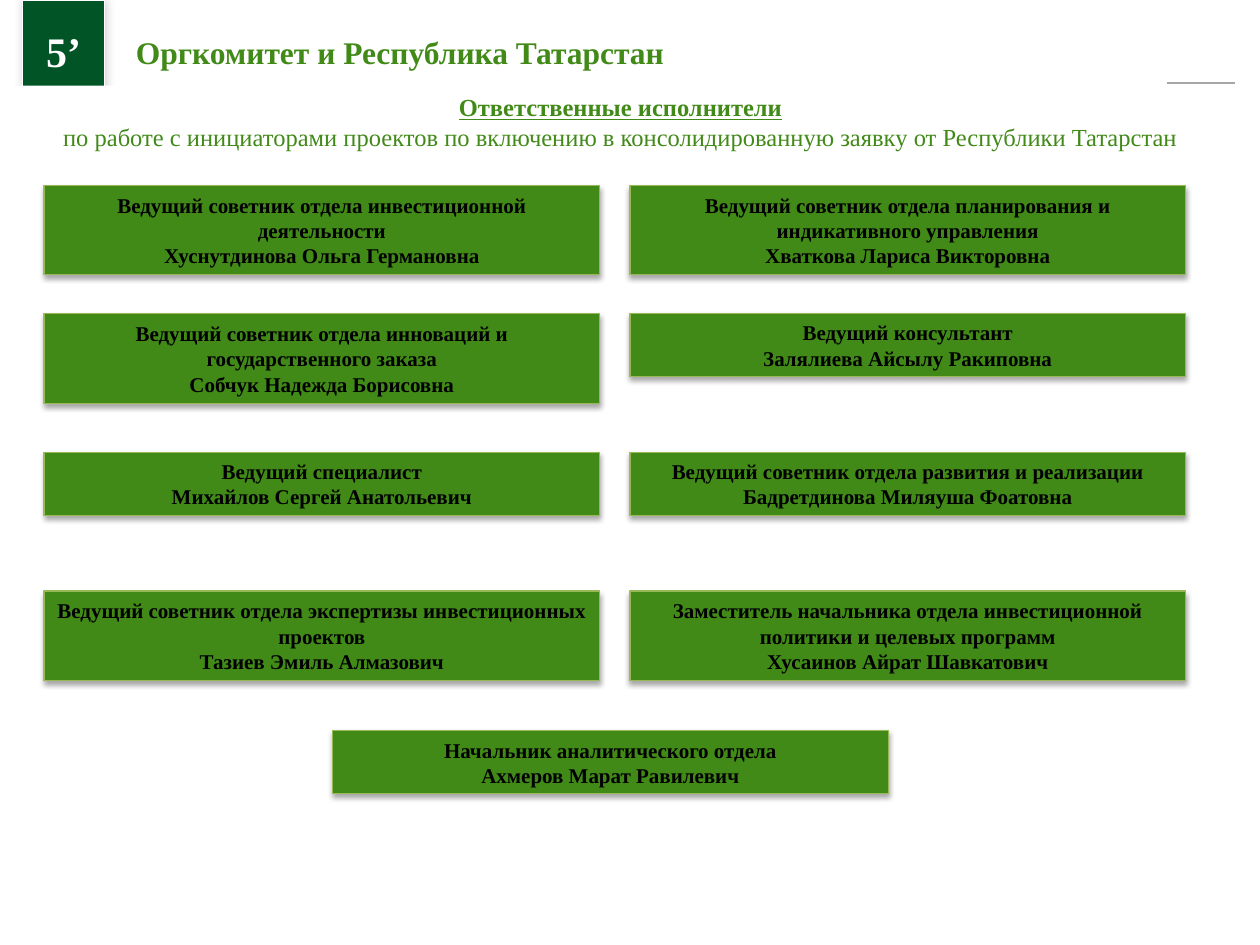
from lxml import etree
from pptx import Presentation
from pptx.dml.color import RGBColor
from pptx.enum import shapes, text
from pptx.oxml.ns import qn
from pptx.util import Inches, Pt

# Content
NUMBER = "5’"
TITLE = "Оргкомитет и Республика Татарстан"
HEAD = "Ответственные исполнители"
SUB = ("по работе с инициаторами проектов по включению "
       "в консолидированную заявку от Республики Татарстан")

# Rows of (post, name, lines of text)
ROWS = [
    [("Ведущий советник отдела инвестиционной деятельности",
      "Хуснутдинова Ольга Германовна", 3),
     ("Ведущий советник отдела планирования и индикативного управления",
      "Хваткова Лариса Викторовна", 3)],
    [("Ведущий советник отдела инноваций и государственного заказа",
      "Собчук Надежда Борисовна", 3),
     ("Ведущий консультант", "Залялиева Айсылу Ракиповна", 2)],
    [("Ведущий специалист", "Михайлов Сергей Анатольевич", 2),
     ("Ведущий советник отдела развития и реализации",
      "Бадретдинова Миляуша Фоатовна", 2)],
    [("Ведущий советник отдела экспертизы инвестиционных проектов",
      "Тазиев Эмиль Алмазович", 3),
     ("Заместитель начальника отдела инвестиционной политики и целевых программ",
      "Хусаинов Айрат Шавкатович", 3)],
    [("Начальник аналитического отдела", "Ахмеров Марат Равилевич", 2)],
]
TOPS = [1.47, 2.49, 3.59, 4.69, 5.8]
LEFTS = {1: [2.64], 2: [0.35, 5]}
WIDTH = 4.41
HEIGHTS = {2: 0.5, 3: 0.71}

COLORS = {"green": "418A18", "dark": "005426", "edge": "98B955",
          "white": "FFFFFF", "black": "000000", "gray": "A6A6A6"}
FONT = "Times New Roman"

deck = Presentation()
deck.slide_width, deck.slide_height = Inches(10), Inches(7.5)
slide = deck.slides.add_slide(deck.slide_layouts[6])


def color(name):
    return RGBColor.from_string(COLORS[name])


def write(para, words, size, name, bold=True, line=False):
    para.text = words
    font = para.font
    font.name, font.size, font.bold = FONT, Pt(size), bold
    font.underline = line
    font.color.rgb = color(name)


def shade(shape, alpha, blur, dist, angle):
    effects = shape._element.spPr.find(qn("a:effectLst"))
    outer = etree.SubElement(effects, qn("a:outerShdw"), blurRad=str(Pt(blur)),
                             dist=str(Pt(dist)), dir=str(angle * 60000),
                             rotWithShape="0")
    tint = etree.SubElement(outer, qn("a:srgbClr"), val=COLORS["black"])
    etree.SubElement(tint, qn("a:alpha"), val=str(alpha * 1000))


def box(left, top, width, height, fill, edge=None):
    shape = slide.shapes.add_shape(
        shapes.MSO_SHAPE.RECTANGLE,
        Inches(left), Inches(top), Inches(width), Inches(height))
    shape.shadow.inherit = False
    shape.fill.solid()
    shape.fill.fore_color.rgb = color(fill)
    if edge:
        shape.line.color.rgb = color(edge)
        shape.line.width = Pt(0.75)
    else:
        shape.line.fill.background()
    frame = shape.text_frame
    frame.word_wrap = True
    frame.vertical_anchor = text.MSO_ANCHOR.MIDDLE
    frame.paragraphs[0].alignment = text.PP_ALIGN.CENTER
    return shape


# Header rule
rule = slide.shapes.add_connector(
    shapes.MSO_CONNECTOR.STRAIGHT,
    Inches(9.26), Inches(0.66), Inches(9.8), Inches(0.66))
rule.line.color.rgb = color("gray")
rule.line.width = Pt(1)
etree.SubElement(rule._element.spPr, qn("a:effectLst"))

# Number tab
tab = box(0.18, 0, 0.65, 0.8, "dark", "white")
shade(tab, 20, 6, 1, 45)
frame = tab.text_frame
frame.margin_left = frame.margin_right = 0
frame.margin_top = frame.margin_bottom = 0
write(frame.paragraphs[0], NUMBER, 24, "white")

# Title
title = slide.shapes.add_textbox(
    Inches(0.98), Inches(0.21), Inches(4.44), Inches(0.4))
title.text_frame.word_wrap = False
write(title.text_frame.paragraphs[0], TITLE, 18, "green")

# Banner, covering the foot of the tab
frame = box(0.12, 0.68, 9.61, 0.57, "white").text_frame
write(frame.paragraphs[0], HEAD, 14, "green", line=True)
para = frame.add_paragraph()
para.alignment = text.PP_ALIGN.CENTER
write(para, SUB, 14, "green", bold=False)

# Cards
for top, row in zip(TOPS, ROWS):
    for left, (post, name, lines) in zip(LEFTS[len(row)], row):
        card = box(left, top, WIDTH, HEIGHTS[lines], "green", "edge")
        shade(card, 35, 3.1, 1.8, 90)
        card.text_frame.auto_size = text.MSO_AUTO_SIZE.SHAPE_TO_FIT_TEXT
        write(card.text_frame.paragraphs[0], f"{post}\v{name}", 12, "black")

deck.save("out.pptx")
